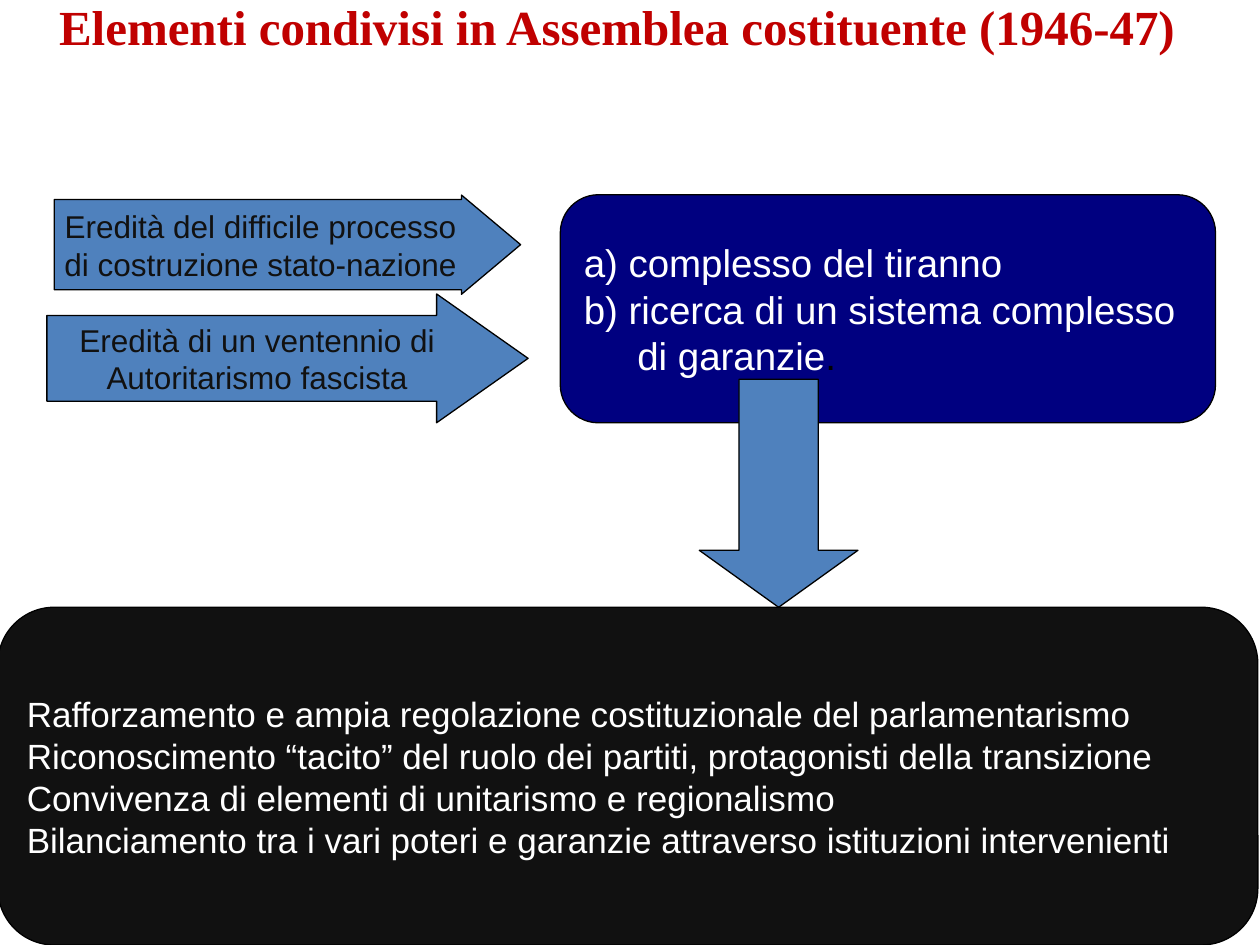
from pptx import Presentation
from pptx.dml.color import RGBColor
from pptx.enum.shapes import MSO_SHAPE as SHAPE
from pptx.enum.text import MSO_ANCHOR as ANCHOR, MSO_AUTO_SIZE as AUTO_SIZE, PP_ALIGN as ALIGN
from pptx.util import Pt

RED = RGBColor(0xC0, 0x00, 0x00)
BLUE = RGBColor(0x4F, 0x81, 0xBD)
NAVY = RGBColor(0x00, 0x00, 0x80)
INK = RGBColor(0x11, 0x11, 0x11)
BLACK = RGBColor(0x00, 0x00, 0x00)
WHITE = RGBColor(0xFF, 0xFF, 0xFF)


def add_block(kind, box, adjustments, fill):
    block = slide.shapes.add_shape(kind, *[Pt(length) for length in box])
    for index, value in enumerate(adjustments):
        block.adjustments[index] = value
    block.shadow.inherit = False
    block.fill.solid()
    block.fill.fore_color.rgb = fill
    block.line.color.rgb = BLACK
    block.line.width = Pt(0.75)
    return block


def write_lines(block, lines, size, color, align, wrap):
    frame = block.text_frame
    frame.word_wrap = wrap
    frame.vertical_anchor = ANCHOR.MIDDLE
    frame.text = "\n".join(lines)
    for paragraph in frame.paragraphs:
        paragraph.alignment = align
        paragraph.font.name = "Arial"
        paragraph.font.size = Pt(size)
        paragraph.font.color.rgb = color
    return frame.paragraphs


prs = Presentation()
prs.slide_width, prs.slide_height = Pt(720), Pt(540)
slide = prs.slides.add_slide(prs.slide_layouts[5])

title = slide.shapes.title
title.left, title.top, title.width, title.height = Pt(26.6), Pt(5.8), Pt(667.4), Pt(82.8)
title.text_frame.text = "Elementi condivisi in Assemblea costituente (1946-47)"
title.text_frame.auto_size = AUTO_SIZE.NONE
title.text_frame.vertical_anchor = ANCHOR.TOP
heading = title.text_frame.paragraphs[0]
heading.alignment = ALIGN.LEFT
heading.line_spacing = Pt(22)
heading.font.name = "Times New Roman"
heading.font.size = Pt(28)
heading.font.bold = True
heading.font.color.rgb = RED

legacies = [
    ((31, 111.5, 266.5, 56.7), (0.91, 0.596),
     ["Eredità del difficile processo", "di costruzione stato-nazione"]),
    ((26.8, 168, 275, 73.6), (0.666, 0.71),
     ["Eredità di un ventennio di", "Autoritarismo fascista"]),
]
for box, adjustments, lines in legacies:
    legacy = add_block(SHAPE.RIGHT_ARROW, box, adjustments, BLUE)
    write_lines(legacy, lines, 18, INK, ALIGN.CENTER, False)

concerns = add_block(SHAPE.ROUNDED_RECTANGLE, (320.2, 111.3, 374.4, 130.3), (0.167,), NAVY)
concern_lines = write_lines(
    concerns,
    ["a) complesso del tiranno", "b) ricerca di un sistema complesso", "di garanzie"],
    22, WHITE, ALIGN.LEFT, True)
concern_lines[2]._p.get_or_add_pPr().set("marL", str(Pt(30.6)))
full_stop = concern_lines[2].add_run()
full_stop.text = "."
full_stop.font.color.rgb = BLACK

add_block(SHAPE.DOWN_ARROW, (399.6, 216.7, 90.7, 130.3), (0.5, 0.359), BLUE)

outcomes = add_block(SHAPE.ROUNDED_RECTANGLE, (-1.2, 347, 720, 193), (0.167,), INK)
write_lines(
    outcomes,
    ["Rafforzamento e ampia regolazione costituzionale del parlamentarismo",
     "Riconoscimento “tacito” del ruolo dei partiti, protagonisti della transizione",
     "Convivenza di elementi di unitarismo e regionalismo",
     "Bilanciamento tra i vari poteri e garanzie attraverso istituzioni intervenienti"],
    20, WHITE, ALIGN.LEFT, True)

prs.save("out.pptx")
